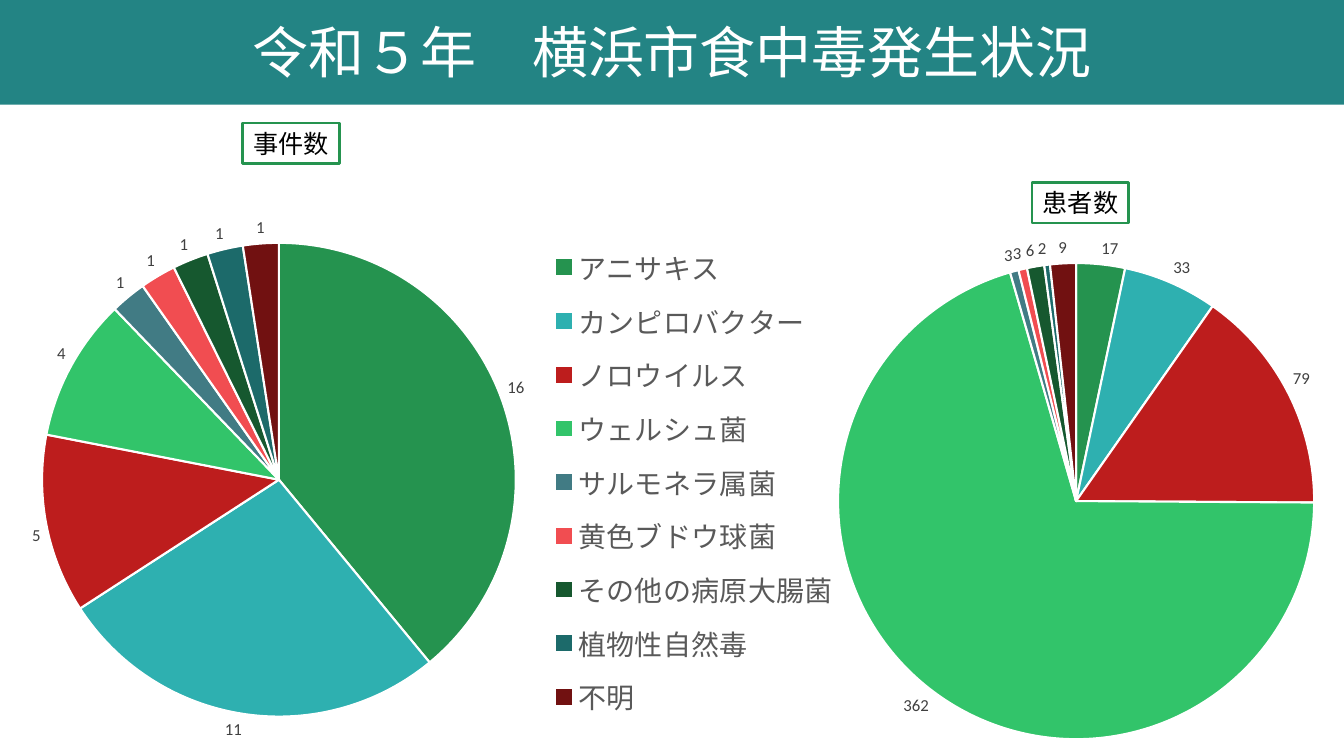
from lxml import etree
from pptx import Presentation
from pptx import util as u
from pptx.chart.data import CategoryChartData
from pptx.dml.color import RGBColor
from pptx.enum import chart as ch, shapes, text
from pptx.oxml import ns

TITLE = "令和５年　横浜市食中毒発生状況"
CAUSES = ["アニサキス", "カンピロバクター", "ノロウイルス", "ウェルシュ菌", "サルモネラ属菌",
          "黄色ブドウ球菌", "その他の病原大腸菌", "植物性自然毒", "不明"]
NUMBERS = [str(n) for n in range(1, len(CAUSES) + 1)]

# Boxes are (left, top, width, height) in centimetres
CHARTS = [
    dict(label="事件数", label_box=(6.12, 3.1, 2.44, 1.02), cats=CAUSES,
         values=(16, 11, 5, 4, 1, 1, 1, 1, 1), box=(0, 5.13, 21.82, 13.92),
         pie=(1.06, 6.12, 11.94, 11.94), legend=(13.75, 5.9, 7.5, 12.5)),
    dict(label="患者数", label_box=(26.01, 4.6, 2.44, 1.02), cats=NUMBERS,
         values=(17, 33, 79, 362, 3, 3, 6, 2, 9), box=(16.94, 5.61, 20.6, 13.44),
         pie=(21.12, 6.63, 12, 12), legend=None),
]

BANNER = RGBColor(0x23, 0x84, 0x84)
GREEN = RGBColor(0x25, 0x93, 0x4F)
WHITE = RGBColor(0xFF, 0xFF, 0xFF)
BLACK = RGBColor(0, 0, 0)
LABEL_GREY = RGBColor(0x40, 0x40, 0x40)
LEGEND_GREY = RGBColor(0x59, 0x59, 0x59)
SLICES = [GREEN] + [RGBColor.from_string(c) for c in (
    "2EB0B0", "BD1D1D", "32C46A", "417B84", "F14D51", "16582F", "1C6A6A", "711111")]
JP_FONT, CHART_FONT = "Noto Sans CJK JP", "Calibri"


def cm(box):
    return [u.Cm(v) for v in box]


def format_font(font, size, color, name=CHART_FONT):
    font.size, font.name, font.bold = u.Pt(size), name, False
    font.color.rgb = color


def write(sp, words, size, color, wrap=True, inset_x=0.25, inset_y=0.13):
    tf = sp.text_frame
    tf.word_wrap = wrap
    tf.auto_size = text.MSO_AUTO_SIZE.NONE
    tf.vertical_anchor = text.MSO_ANCHOR.MIDDLE
    tf.margin_left = tf.margin_right = u.Cm(inset_x)
    tf.margin_top = tf.margin_bottom = u.Cm(inset_y)
    p = tf.paragraphs[0]
    p.alignment = text.PP_ALIGN.CENTER
    r = p.add_run()
    r.text = words
    format_font(r.font, size, color, JP_FONT)
    ea = etree.SubElement(r.font._element, ns.qn("a:ea"))
    ea.set("typeface", JP_FONT)


def place_inside(element, index, box, frame, inner=False):
    """Fix a chart part at a slide box, as fractions of the chart frame."""
    for old in element.findall(ns.qn("c:layout")):
        element.remove(old)
    layout = etree.Element(ns.qn("c:layout"))
    manual = etree.SubElement(layout, ns.qn("c:manualLayout"))
    left, top, width, height = frame
    settings = [("layoutTarget", "inner")] if inner else []
    settings += [("xMode", "edge"), ("yMode", "edge"),
                 ("x", (box[0] - left) / width), ("y", (box[1] - top) / height),
                 ("w", box[2] / width), ("h", box[3] / height)]
    for tag, value in settings:
        etree.SubElement(manual, ns.qn("c:" + tag)).set("val", str(value))
    element.insert(index, layout)


def add_pie(s, cats, values, box, pie, legend):
    data = CategoryChartData()
    data.categories = cats
    data.add_series("Series 1", values)
    chart = s.shapes.add_chart(ch.XL_CHART_TYPE.PIE, *cm(box), data).chart
    chart.has_title = False
    format_font(chart.font, 10, BLACK)
    plot = chart.plots[0]
    plot.vary_by_categories = True
    place_inside(plot._element.getparent(), 0, pie, box, inner=True)

    for i, color in enumerate(SLICES):
        fmt = plot.series[0].points[i].format
        fmt.fill.solid()
        fmt.fill.fore_color.rgb = color
        fmt.line.color.rgb = WHITE
        fmt.line.width = u.Pt(1.5)

    labels = plot.series[0].data_labels
    labels.show_value = True
    labels.show_percentage = False
    labels.show_legend_key = False
    labels.position = ch.XL_LABEL_POSITION.OUTSIDE_END
    format_font(labels.font, 12, LABEL_GREY)

    chart.has_legend = legend is not None
    if legend:
        chart.legend.position = ch.XL_LEGEND_POSITION.RIGHT
        chart.legend.include_in_layout = False
        format_font(chart.legend.font, 20, LEGEND_GREY)
        place_inside(chart.legend._element, 1, legend, box)


def add_label(s, words, box):
    sp = s.shapes.add_shape(shapes.MSO_SHAPE.RECTANGLE, *cm(box))
    sp.shadow.inherit = False
    sp.fill.solid()
    sp.fill.fore_color.rgb = WHITE
    sp.line.color.rgb = GREEN
    sp.line.width = u.Pt(2)
    write(sp, words, 18, BLACK, wrap=False)


def main():
    prs = Presentation()
    prs.slide_width, prs.slide_height = u.Cm(33.87), u.Cm(19.05)
    s = prs.slides.add_slide(prs.slide_layouts[5])

    title = s.shapes.title
    title.left, title.top, title.width, title.height = cm((0, -0.08, 33.87, 2.72))
    title.fill.solid()
    title.fill.fore_color.rgb = BANNER
    write(title, TITLE, 40, WHITE, inset_y=0.5)

    for c in CHARTS:
        add_pie(s, c["cats"], c["values"], c["box"], c["pie"], c["legend"])
    for c in CHARTS:
        add_label(s, c["label"], c["label_box"])
    prs.save("out.pptx")


if __name__ == "__main__":
    main()
